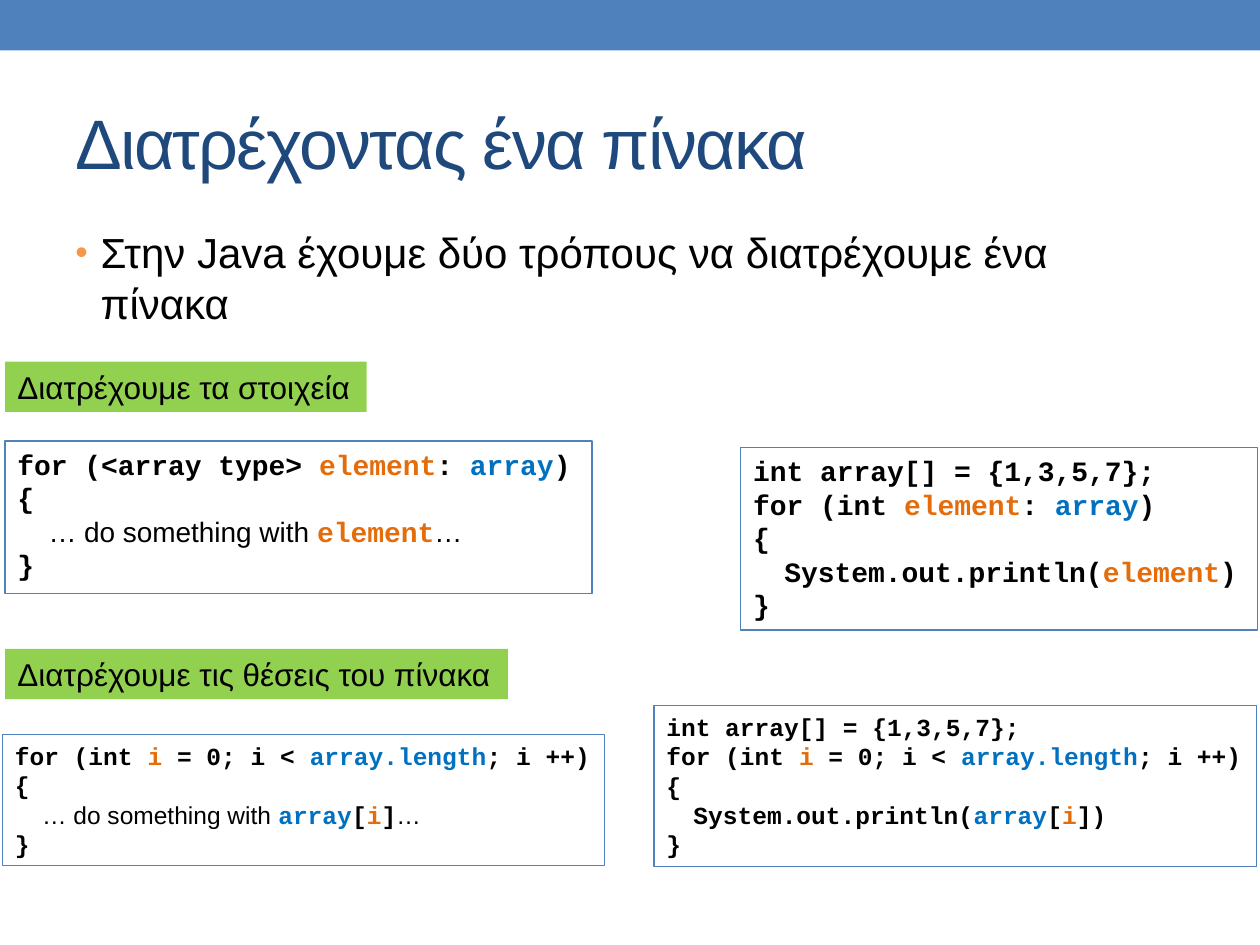
from dataclasses import dataclass

from lxml.etree import SubElement
from pptx import Presentation
from pptx.dml.color import RGBColor as RGB
from pptx.enum.shapes import MSO_SHAPE as SHAPE
from pptx.enum.text import MSO_ANCHOR as ANCHOR, MSO_AUTO_SIZE as AUTO
from pptx.oxml.ns import qn
from pptx.util import Inches, Pt


@dataclass(frozen=True)
class Theme:
    sans: str = "Arial"
    mono: str = "Courier New"
    blue: str = "4F81BD"
    navy: str = "1F497D"
    green: str = "92D050"
    bullet: str = "F79646"
    black: str = "000000"
    orange: str = "E46C0A"
    sky: str = "0070C0"
    title: int = 40
    body: int = 24
    label: int = 18
    code_large: int = 16
    code_small: int = 14


T = Theme()
STYLES = {
    "code": (T.mono, T.black, True),
    "var": (T.mono, T.orange, True),
    "array": (T.mono, T.sky, True),
    "note": (T.sans, T.black, False),
}


class SlideBuilder:
    def __init__(self, prs, theme):
        self.theme = theme
        self.slide = prs.slides.add_slide(prs.slide_layouts[6])

    def rect(self, box, fill=None, line=None):
        sp = self.slide.shapes.add_shape(SHAPE.RECTANGLE, *map(Inches, box))
        sp.shadow.inherit = False
        for part, color in ((sp.fill, fill), (sp.line.fill, line)):
            if color:
                part.solid()
                part.fore_color.rgb = RGB.from_string(color)
            else:
                part.background()
        if line:
            sp.line.width = Pt(0.75)
        return sp

    def text_box(self, box, fill=None, line=None, **fmt):
        if fill or line:
            sp = self.rect(box, fill, line)
        else:
            sp = self.slide.shapes.add_textbox(*map(Inches, box))
        tf = sp.text_frame
        defaults = {"word_wrap": True, "auto_size": AUTO.NONE,
                    "vertical_anchor": ANCHOR.TOP}
        for name, value in {**defaults, **fmt}.items():
            setattr(tf, name, value)
        return tf

    def run(self, p, text, size, font, color, bold=False):
        r = p.add_run()
        r.text = text
        for name, value in {"name": font, "size": Pt(size), "bold": bold}.items():
            setattr(r.font, name, value)
        r.font.color.rgb = RGB.from_string(color)
        return r

    def title(self, text, box):
        t = self.theme
        tf = self.text_box(box, vertical_anchor=ANCHOR.MIDDLE)
        r = self.run(tf.paragraphs[0], text, t.title, t.sans, t.navy)
        r.font._element.set("spc", "-100")

    def bullet(self, text, box):
        t = self.theme
        p = self.text_box(box).paragraphs[0]
        p.space_before = Pt(0.2 * t.body)
        self.run(p, text, t.body, t.sans, t.black)
        pPr = p._p.get_or_add_pPr()
        pPr.set("marL", str(Inches(0.2)))
        pPr.set("indent", str(-Inches(0.2)))
        clr = SubElement(pPr, qn("a:buClr"))
        SubElement(clr, qn("a:srgbClr"), val=t.bullet)
        SubElement(pPr, qn("a:buSzPct"), val="85000")
        SubElement(pPr, qn("a:buFont"), typeface=t.sans)
        SubElement(pPr, qn("a:buChar"), char="•")

    def label(self, text, box):
        t = self.theme
        tf = self.text_box(box, fill=t.green, word_wrap=False)
        p = tf.paragraphs[0]
        p.alignment = 1
        self.run(p, text, t.label, t.sans, t.black)

    def code(self, header, action, box, size):
        tf = self.text_box(box, line=self.theme.blue, word_wrap=False)
        lines = [*header, OPEN, action, CLOSE]
        for i, line in enumerate(lines):
            p = tf.paragraphs[0] if i == 0 else tf.add_paragraph()
            p.alignment = 1
            if line is action:
                indent = Pt(round(size * 1.11, 1))
                p._p.get_or_add_pPr().set("marL", str(indent))
            for style, text in line:
                self.run(p, text, size, *STYLES[style])


OPEN = [("code", "{")]
CLOSE = [("code", "}")]
DECLARE = [("code", "int array[] = {1,3,5,7};")]
DO = ("note", "… do something with ")
PRINT = ("code", "System.out.println(")
ELEMENT = ("var", "element")
CELL = [("array", "array"), ("code", "["), ("var", "i")]
INDEX_LOOP = [("code", "for (int "), ("var", "i"), ("code", " = 0; i < "),
              ("array", "array.length"), ("code", "; i ++)")]


def element_loop(kind):
    return [("code", f"for ({kind} "), ELEMENT, ("code", ": "),
            ("array", "array"), ("code", ")")]


def main():
    prs = Presentation()
    prs.slide_width, prs.slide_height = Inches(10), Inches(7.5)
    s = SlideBuilder(prs, T)
    s.rect((0, 0, 10, 0.4), fill=T.blue)
    s.title("Διατρέχοντας ένα πίνακα", (0.5, 0.58, 9, 1.08))
    s.bullet("Στην Java έχουμε δύο τρόπους να διατρέχουμε ένα πίνακα",
             (0.5, 1.75, 9, 0.83))

    s.label("Διατρέχουμε τα στοιχεία", (0.04, 2.87, 2.87, 0.4))
    s.code([element_loop("<array type>")], [DO, ELEMENT, ("note", "…")],
           (0.04, 3.5, 4.66, 1.21), T.code_large)
    s.code([DECLARE, element_loop("int")], [PRINT, ELEMENT, ("code", ")")],
           (5.88, 3.55, 4.1, 1.45), T.code_large)

    s.label("Διατρέχουμε τις θέσεις του πίνακα", (0.04, 5.15, 3.99, 0.4))
    s.code([INDEX_LOOP], [DO, *CELL, ("code", "]"), ("note", "…")],
           (0.02, 5.83, 4.78, 1.04), T.code_small)
    s.code([DECLARE, INDEX_LOOP], [PRINT, *CELL, ("code", "])")],
           (5.19, 5.6, 4.78, 1.28), T.code_small)
    prs.save("out.pptx")


if __name__ == "__main__":
    main()
